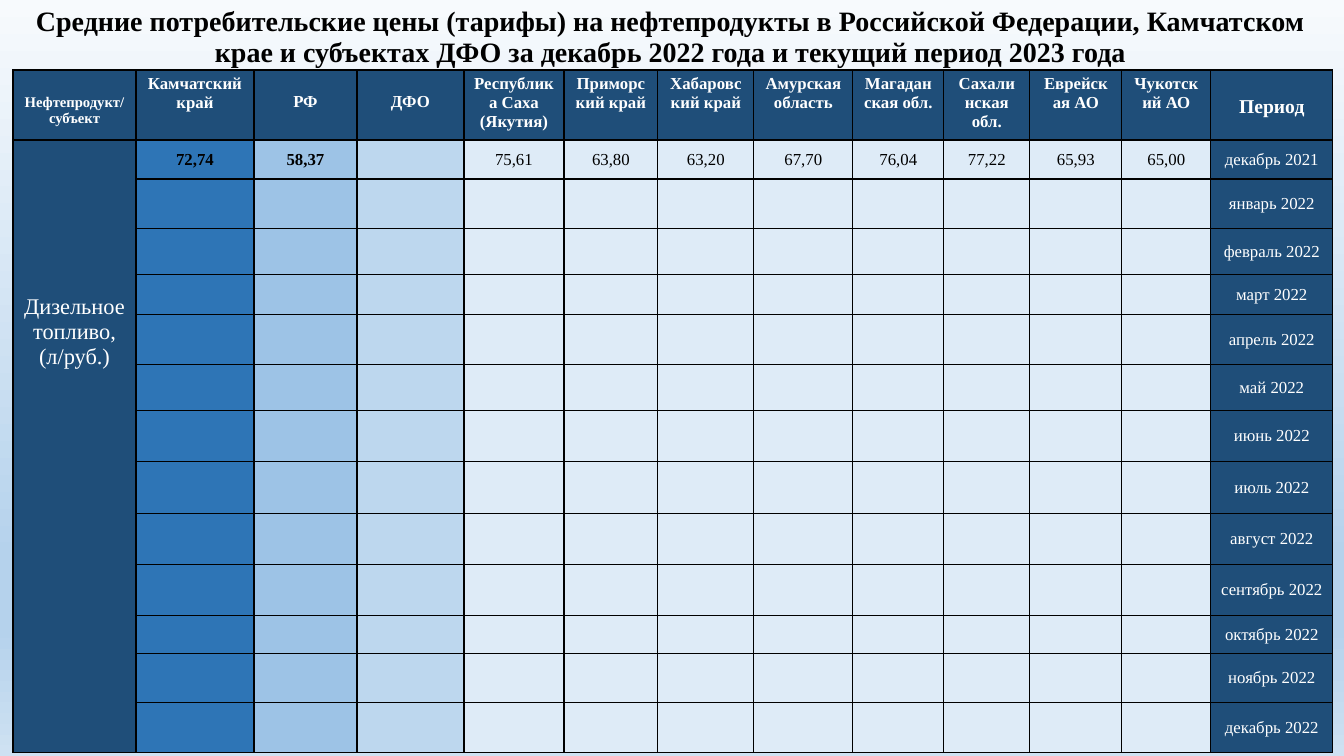
from lxml.etree import SubElement
from pptx import Presentation
from pptx.dml.color import RGBColor
from pptx.enum.text import MSO_ANCHOR as ANCHOR, PP_ALIGN as ALIGN
from pptx.oxml.ns import qn
from pptx.util import Inches, Pt

PX = Inches(1) / 100.8
FONT = "Times New Roman"
C = {"black": "000000", "white": "FFFFFF", "navy": "1F4E79", "region": "2E75B6",
     "russia": "9DC3E6", "district": "BDD7EE", "pale": "DEEBF7"}
BACKGROUND = [(0, "F7FAFD"), (74, "B5D2EC"), (83, "B5D2EC"), (100, "CEE1F2")]

TITLE = ("Средние потребительские цены (тарифы) на нефтепродукты в Российской Федерации, "
         "Камчатском крае и субъектах ДФО за декабрь 2022 года и текущий период 2023 года")
PRODUCT = "Дизельное топливо,\n(л/руб.)"
HEADERS = ["Нефтепродукт/субъект", "Камчатский край", "РФ", "ДФО",
           "Республика Саха (Якутия)", "Приморский край", "Хабаровский край",
           "Амурская область", "Магаданская обл.", "Сахалинская обл.",
           "Еврейская АО", "Чукотский АО", "Период"]
PRICES = ["72,74", "58,37", "", "75,61", "63,80", "63,20", "67,70", "76,04",
          "77,22", "65,93", "65,00"]
MONTHS = ["январь", "февраль", "март", "апрель", "май", "июнь", "июль", "август",
          "сентябрь", "октябрь", "ноябрь", "декабрь"]
PERIODS = ["декабрь 2021"] + [f"{month} 2022" for month in MONTHS]
PRICE_FILLS = ["region", "russia", "district"] + ["pale"] * 8

COL_WIDTHS = [123, 118, 103, 107, 100, 94, 96, 99, 91, 86, 92, 89, 122]
ROW_HEIGHTS = [70, 39, 50, 46, 40, 50, 46, 51, 52, 51, 51, 38, 49, 50]
HEADER_FORMATS = {"Нефтепродукт/субъект": {"size": 10.5, "top": 24},
                  "РФ": {"top": 23}, "ДФО": {"top": 23},
                  "Период": {"size": 14, "top": 26}}


def px(n):
    return round(n * PX)


def write(tf, text, size=12, color="white", bold=False, spacing=None):
    """Fill a text frame with one centred paragraph per line of text."""
    for i, line in enumerate(text.split("\n")):
        p = tf.add_paragraph() if i else tf.paragraphs[0]
        p.alignment = ALIGN.CENTER
        if spacing:
            p.line_spacing = spacing
        r = p.add_run()
        r.text = line
        for name, value in {"name": FONT, "size": Pt(size), "bold": bold}.items():
            setattr(r.font, name, value)
        r.font.color.rgb = RGBColor.from_string(C[color])


def add_borders(cell):
    tc_pr = cell._tc.get_or_add_tcPr()
    for i, side in enumerate(("lnL", "lnR", "lnT", "lnB")):
        ln = tc_pr.makeelement(qn(f"a:{side}"), {"w": str(Pt(1))})
        fill = SubElement(ln, qn("a:solidFill"))
        SubElement(fill, qn("a:srgbClr"), val=C["black"])
        tc_pr.insert(i, ln)


def format_cell(cell, fill, text="", top=5, anchor=ANCHOR.MIDDLE, **font):
    cell.fill.solid()
    cell.fill.fore_color.rgb = RGBColor.from_string(C[fill])
    add_borders(cell)
    cell.vertical_anchor = anchor
    # Empty cells need no margins, so that low rows keep their height
    cell.margin_top = px(top if text else 0)
    cell.margin_bottom = px(5 if text else 0)
    if text:
        write(cell.text_frame, text, **font)


def set_background(s):
    fill = s.background.fill
    fill.gradient()
    fill.gradient_angle = 270
    stops = s.element.find(".//" + qn("a:gsLst"))
    for stop in list(stops):
        stops.remove(stop)
    for percent, color in BACKGROUND:
        stop = SubElement(stops, qn("a:gs"), pos=str(percent * 1000))
        SubElement(stop, qn("a:srgbClr"), val=color)


def add_title(s):
    sp = s.shapes.title
    sp.left, sp.top, sp.width, sp.height = map(px, (20, 14, 1301, 48))
    sp.text_frame.word_wrap = True
    sp.text_frame.vertical_anchor = ANCHOR.MIDDLE
    write(sp.text_frame, TITLE, size=20, color="black", bold=True, spacing=0.9)


def add_price_table(s):
    frame = s.shapes.add_table(len(ROW_HEIGHTS), len(COL_WIDTHS), px(13), px(70),
                               px(sum(COL_WIDTHS)), px(sum(ROW_HEIGHTS)))
    table = frame.table
    table.first_row = table.horz_banding = False
    for col, width in zip(table.columns, COL_WIDTHS):
        col.width = px(width)
    for row, height in zip(table.rows, ROW_HEIGHTS):
        row.height = px(height)

    for c, header in enumerate(HEADERS):
        format_cell(table.cell(0, c), "navy", header, anchor=ANCHOR.TOP, bold=True,
                    **HEADER_FORMATS.get(header, {}))

    last_row, last_col = len(PERIODS), len(HEADERS) - 1
    for r, period in enumerate(PERIODS, 1):
        prices = PRICES if r == 1 else [""] * len(PRICES)
        for c, (price, fill) in enumerate(zip(prices, PRICE_FILLS), 1):
            format_cell(table.cell(r, c), fill, price, color="black", bold=c < 3)
        format_cell(table.cell(r, last_col), "navy", period)
        if r > 1:
            format_cell(table.cell(r, 0), "navy")
    format_cell(table.cell(1, 0), "navy", PRODUCT, top=155, anchor=ANCHOR.TOP, size=16)
    table.cell(1, 0).merge(table.cell(last_row, 0))


def main():
    prs = Presentation()
    prs.slide_width, prs.slide_height = px(1344), px(756)
    s = prs.slides.add_slide(prs.slide_layouts[5])
    set_background(s)
    add_title(s)
    add_price_table(s)
    prs.save("out.pptx")


if __name__ == "__main__":
    main()
